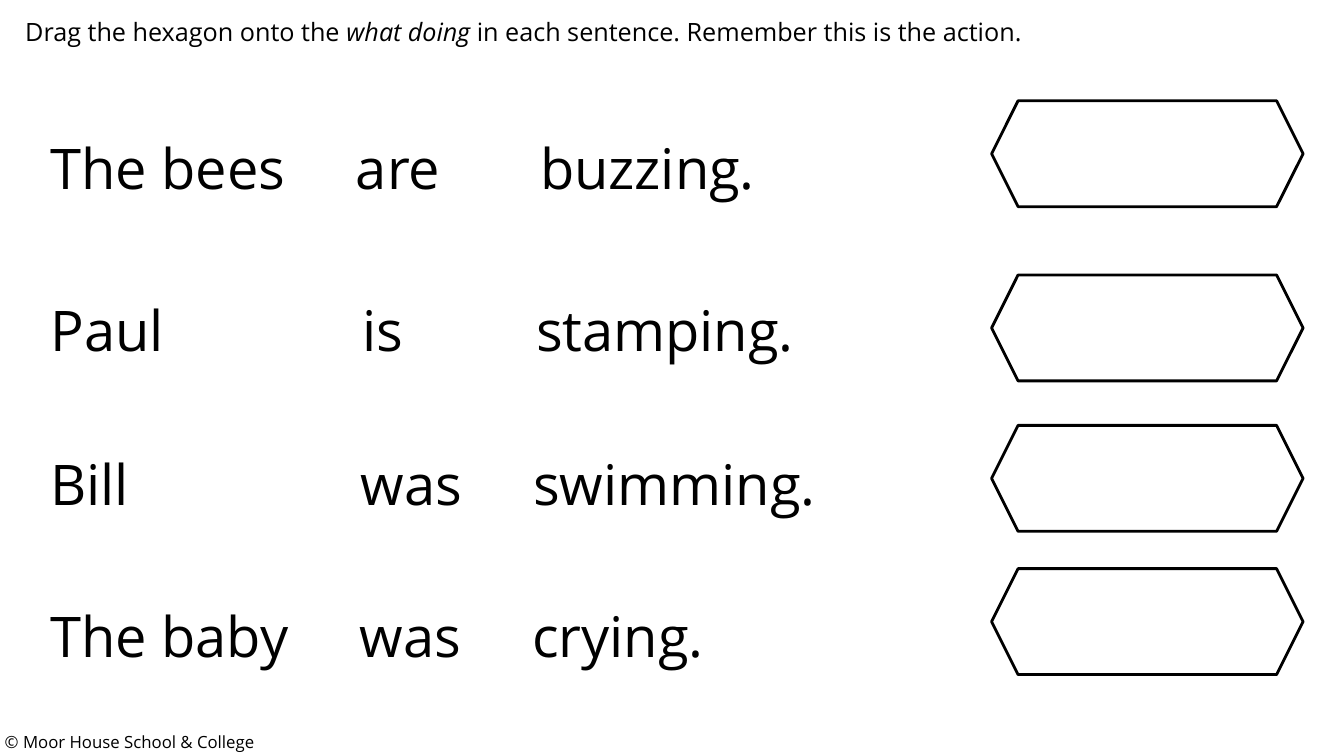
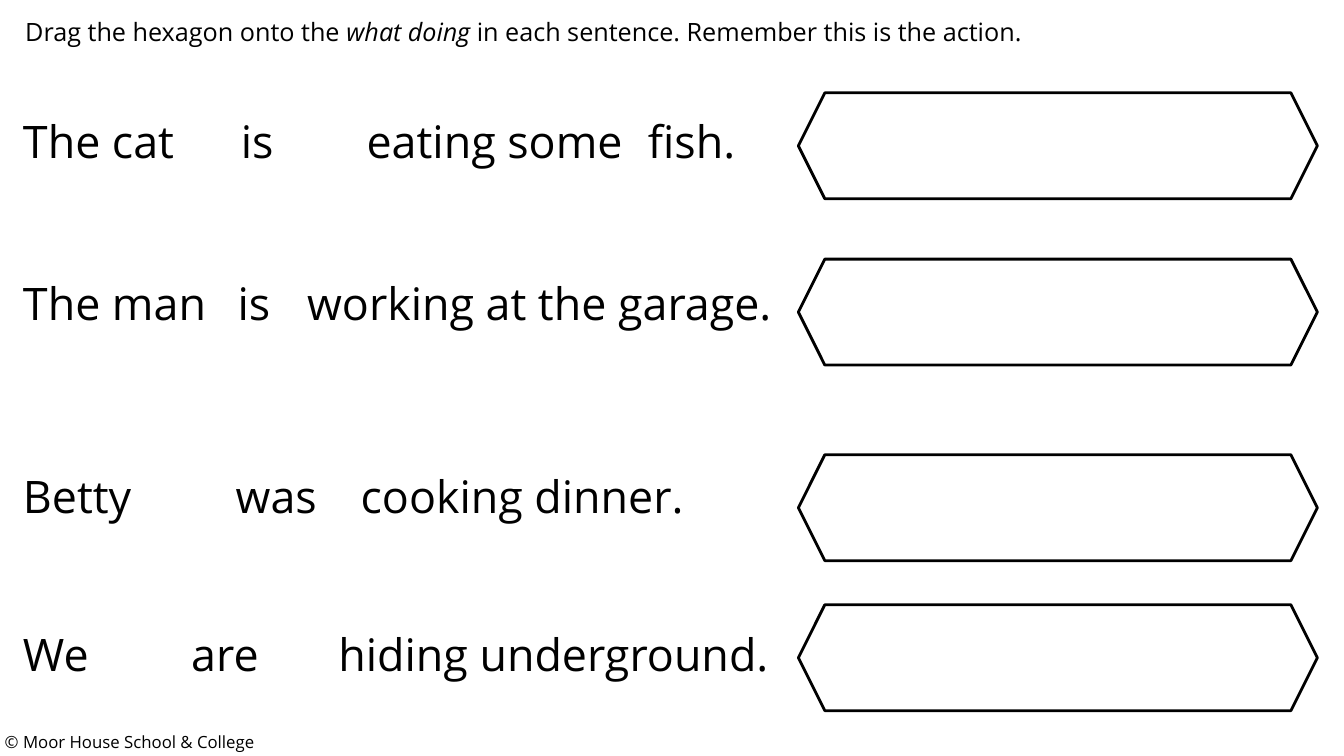
from dataclasses import dataclass

from lxml.etree import SubElement
from pptx import Presentation
from pptx.dml.color import RGBColor
from pptx.enum.shapes import MSO_SHAPE
from pptx.enum.text import MSO_ANCHOR, MSO_AUTO_SIZE, PP_ALIGN
from pptx.oxml.ns import qn
from pptx.slide import Slide, SlideLayout
from pptx.text.text import TextFrame
from pptx.util import Cm, Pt


@dataclass(frozen=True)
class Theme:
    font: str = "Open Sans"
    ink: RGBColor = RGBColor(0x00, 0x00, 0x00)
    title_size: int = 18
    footer_size: int = 12
    outline: float = 2


@dataclass(frozen=True)
class Sentence:
    """Words set at tab stops; all positions are in centimetres."""
    words: tuple[str, ...]
    stops: tuple[float, ...]
    top: float
    hexagon_top: float


@dataclass(frozen=True)
class Exercise:
    size: int
    left: float
    height: float
    hexagon_left: float
    hexagon_width: float
    sentences: tuple[Sentence, ...]


THEME = Theme()
TITLE_PARTS = (
    ("Drag the hexagon onto the ", False),
    ("what doing ", True),
    ("in each sentence. Remember this is the action.", False),
)
FOOTER = "© Moor House School & College"
SENTENCE_WIDTH = 23.5
HEXAGON_HEIGHT = 2.67

EXERCISES = (
    Exercise(40, 1.02, 1.96, 24.99, 7.85, (
        Sentence(("The bees", "are", "buzzing."), (7.7, 12.34), 3.23, 2.54),
        Sentence(("Paul", "is", "stamping."), (7.87, 12.24), 7.32, 6.93),
        Sentence(("Bill", "was", "swimming."), (7.82, 12.17), 11.2, 10.72),
        Sentence(("The baby", "was", "crying."), (7.8, 12.14), 15.04, 14.33),
    )),
    Exercise(32, 0.33, 1.63, 20.12, 13.08, (
        Sentence(("The cat", "is", "eating some", "fish."), (5.49, 8.66, 15.75), 2.74, 2.34),
        Sentence(("The man", "is", "working at the garage."), (5.41, 7.16), 6.83, 6.53),
        Sentence(("Betty", "was", "cooking dinner."), (5.36, 8.51), 11.68, 11.46),
        Sentence(("We", "are", "hiding underground."), (4.24, 7.95), 15.67, 15.24),
    )),
)


def format_text(frame: TextFrame, size: int) -> None:
    frame.word_wrap = True
    frame.auto_size = MSO_AUTO_SIZE.NONE
    frame.vertical_anchor = MSO_ANCHOR.TOP
    for para in frame.paragraphs:
        para.alignment = PP_ALIGN.LEFT
        for span in para.runs:
            span.font.name = THEME.font
            span.font.size = Pt(size)
            span.font.color.rgb = THEME.ink


def add_text(page: Slide, text: str, left: float, top: float,
             width: float, height: float, size: int):
    box = page.shapes.add_textbox(Cm(left), Cm(top), Cm(width), Cm(height))
    box.text_frame.text = text
    format_text(box.text_frame, size)
    return box


def set_tab_stops(frame: TextFrame, stops: tuple[float, ...]) -> None:
    properties = frame.paragraphs[0]._p.get_or_add_pPr()
    tab_list = SubElement(properties, qn("a:tabLst"))
    for stop in stops:
        SubElement(tab_list, qn("a:tab"), pos=str(Cm(stop)), algn="l")


def add_title(page: Slide) -> None:
    title = page.shapes.title
    title.left, title.top, title.width, title.height = Cm(0.38), Cm(0.28), Cm(31.83), Cm(1.02)
    para = title.text_frame.paragraphs[0]
    for text, italic in TITLE_PARTS:
        span = para.add_run()
        span.text = text
        span.font.italic = italic
    format_text(title.text_frame, THEME.title_size)


def add_hexagon(page: Slide, left: float, top: float, width: float) -> None:
    hexagon = page.shapes.add_shape(
        MSO_SHAPE.HEXAGON, Cm(left), Cm(top), Cm(width), Cm(HEXAGON_HEIGHT))
    hexagon.shadow.inherit = False
    hexagon.fill.background()
    hexagon.line.color.rgb = THEME.ink
    hexagon.line.width = Pt(THEME.outline)


def add_exercise(page: Slide, exercise: Exercise) -> None:
    add_title(page)
    for sentence in exercise.sentences:
        box = add_text(page, "\t".join(sentence.words), exercise.left, sentence.top,
                       SENTENCE_WIDTH, exercise.height, exercise.size)
        set_tab_stops(box.text_frame, sentence.stops)
        add_hexagon(page, exercise.hexagon_left, sentence.hexagon_top, exercise.hexagon_width)


def move_footer_to_layout(page: Slide, layout: SlideLayout) -> None:
    footer = add_text(page, FOOTER, -0.13, 18.31, 13, 0.76, THEME.footer_size)
    layout.shapes._spTree.append(footer._element)


def main() -> None:
    deck = Presentation()
    deck.slide_width, deck.slide_height = Cm(33.87), Cm(19.05)
    layout = deck.slide_layouts.get_by_name("Title Only")
    pages = [deck.slides.add_slide(layout) for _ in EXERCISES]

    # Shared footer
    move_footer_to_layout(pages[0], layout)

    # Exercise slides
    for page, exercise in zip(pages, EXERCISES):
        add_exercise(page, exercise)

    deck.save("out.pptx")


if __name__ == "__main__":
    main()
